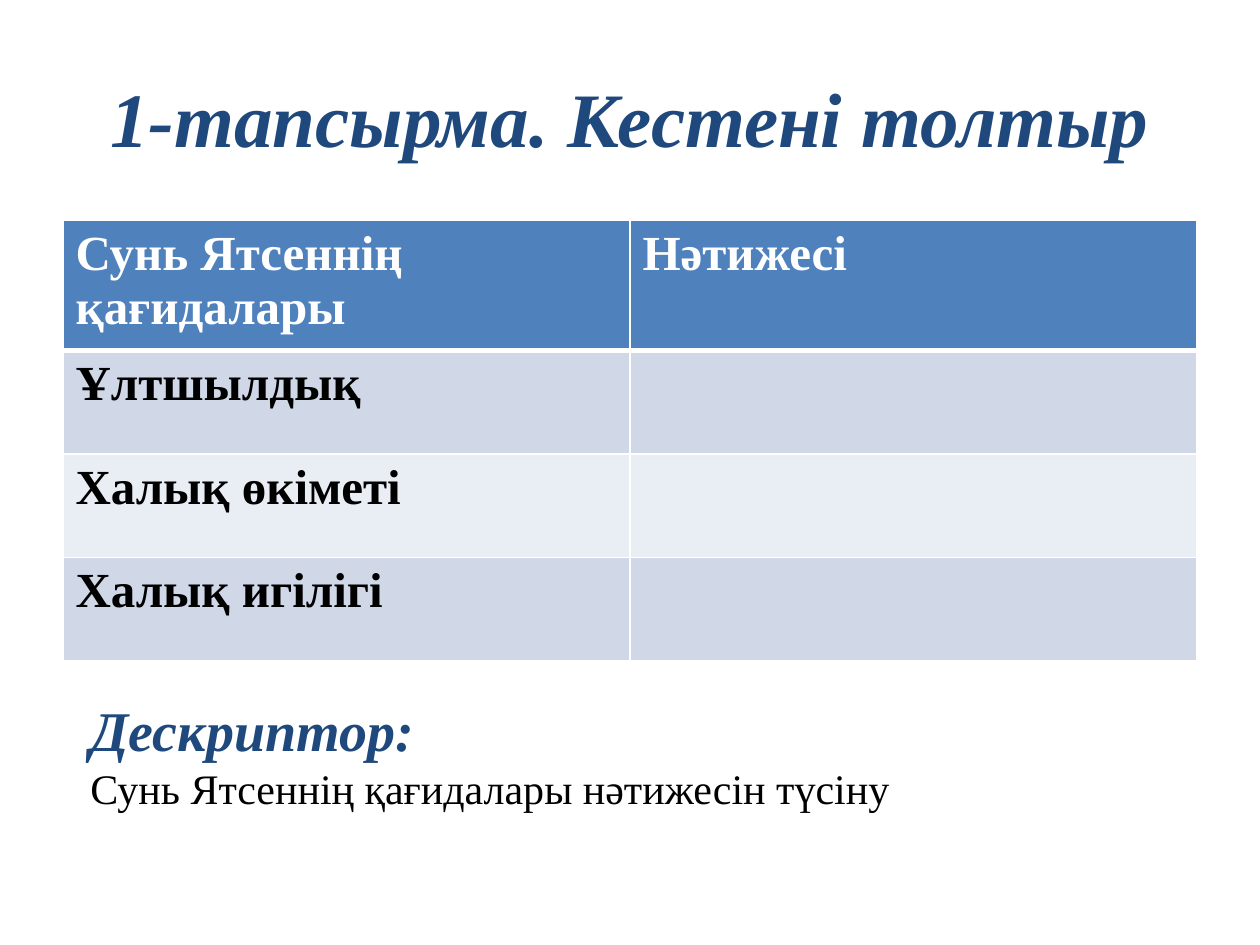
"""Build a task slide with a table of principles to fill in and a descriptor."""
from lxml import etree
from pptx import Presentation
from pptx import util as u
from pptx.dml.color import RGBColor
from pptx.enum import text
from pptx.oxml import ns

COLORS = {"navy": "1F497D", "header": "4F81BD", "odd": "D0D8E8",
          "even": "E9EDF4", "white": "FFFFFF", "black": "000000"}


def style(para, size, color, bold=False, italic=False):
    font = para.font
    font.name, font.size = "Times New Roman", u.Pt(size)
    font.bold, font.italic = bold, italic
    font.color.rgb = RGBColor.from_string(COLORS[color])


def border(cell, side, points):
    line = etree.SubElement(cell._tc.get_or_add_tcPr(), ns.qn(f"a:ln{side}"), w=str(u.Pt(points)))
    fill = etree.SubElement(line, ns.qn("a:solidFill"))
    etree.SubElement(fill, ns.qn("a:srgbClr"), val=COLORS["white"])


deck = Presentation()
deck.slide_width, deck.slide_height = u.Inches(10), u.Inches(7.5)
page = deck.slides.add_slide(deck.slide_layouts[6])
margin = int(deck.slide_width * 0.05)
content_width = deck.slide_width - 2 * margin

title = page.shapes.add_textbox(margin, int(deck.slide_height * 0.04), content_width, u.Inches(1.25))
title.text_frame.word_wrap = True
title.text_frame.vertical_anchor = text.MSO_ANCHOR.MIDDLE
para = title.text_frame.paragraphs[0]
para.text = "1-тапсырма. Кестені толтыр"
para.alignment = text.PP_ALIGN.CENTER
style(para, 44, "navy", bold=True, italic=True)

rows = [("Сунь Ятсеннің қағидалары", "Нәтижесі"),
        ("Ұлтшылдық", ""),
        ("Халық өкіметі", ""),
        ("Халық игілігі", "")]
row_fills = ["header", "odd", "even", "odd"]
row_heights = [0.95, 0.82, 0.82, 0.82]

table = page.shapes.add_table(len(rows), 2, margin, u.Inches(1.75), content_width,
                              u.Inches(sum(row_heights))).table
for row_index, (words, fill, height) in enumerate(zip(rows, row_fills, row_heights)):
    table.rows[row_index].height = u.Inches(height)
    is_header = row_index == 0
    for column_index, word in enumerate(words):
        cell = table.cell(row_index, column_index)
        for side in "LRTB":
            thick = (is_header and side == "B") or (row_index == 1 and side == "T")
            border(cell, side, 3 if thick else 1)
        cell.fill.solid()
        cell.fill.fore_color.rgb = RGBColor.from_string(COLORS[fill])
        if word:
            cell.text = word
            style(cell.text_frame.paragraphs[0], 28, "white" if is_header else "black", bold=True)

descriptor = page.shapes.add_textbox(u.Inches(0.62), u.Inches(5.47), u.Inches(8.67), u.Inches(1.04))
descriptor.text_frame.word_wrap = True
descriptor.text_frame.auto_size = text.MSO_AUTO_SIZE.SHAPE_TO_FIT_TEXT
descriptor.text_frame.text = "Дескриптор:\nСунь Ятсеннің қағидалары нәтижесін түсіну"
heading, criterion = descriptor.text_frame.paragraphs
style(heading, 32, "navy", bold=True, italic=True)
style(criterion, 24, "black")

deck.save("out.pptx")
